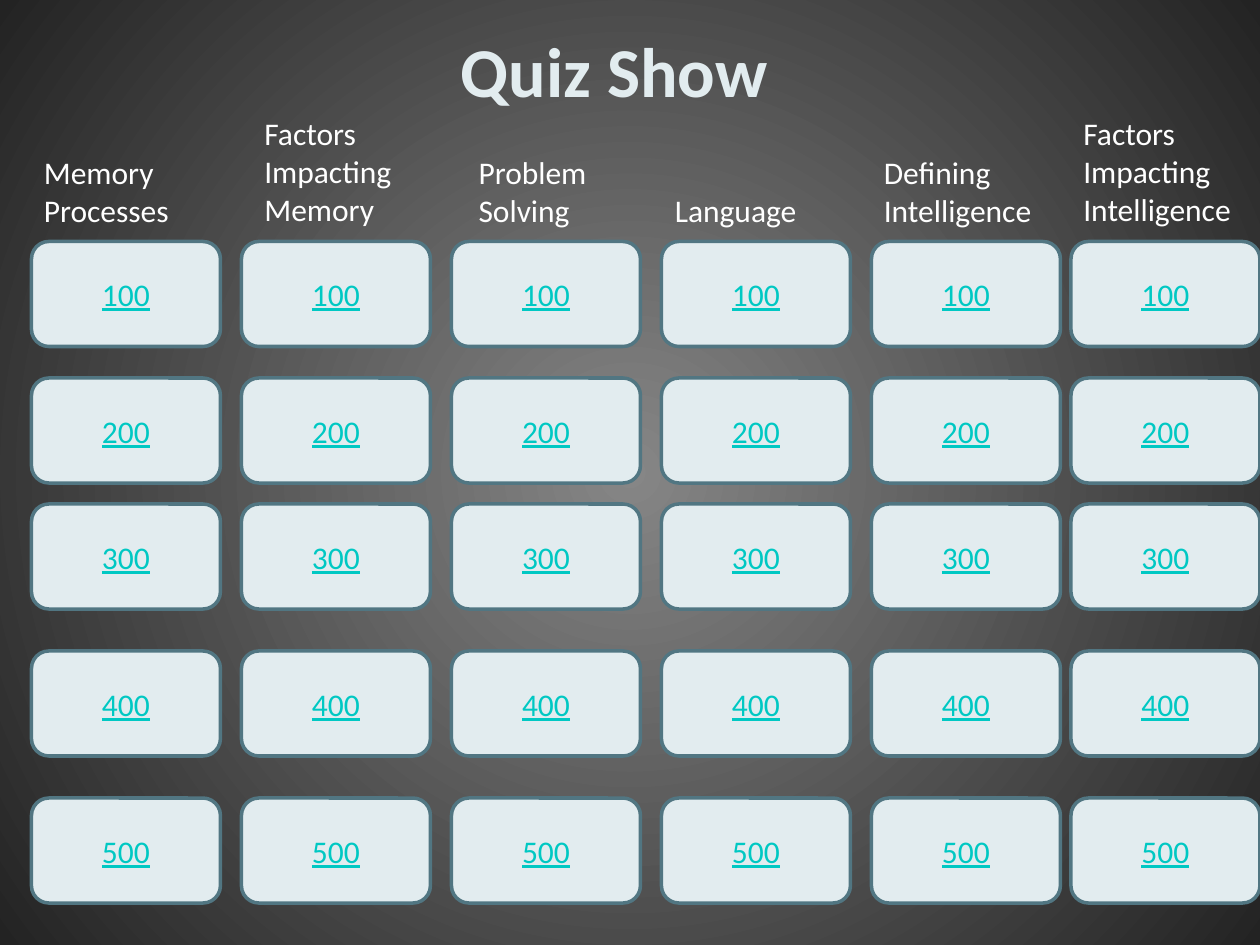
from dataclasses import dataclass
from lxml.etree import SubElement
from pptx import Presentation
from pptx.dml.color import RGBColor
from pptx.enum.shapes import MSO_SHAPE
from pptx.enum.text import MSO_ANCHOR, MSO_AUTO_SIZE, PP_ALIGN
from pptx.oxml.ns import qn
from pptx.util import Inches, Pt

TITLE = "Quiz Show"
# heading, card column, heading indent, heading width (grid columns)
TOPICS = [
    ("Memory Processes", 3, 0, 18),
    ("Factors Impacting Memory", 23, 1, 17),
    ("Problem Solving", 43, 1.4, 17),
    ("Language", 63, 0.1, 18),
    ("Defining Intelligence", 83, 0, 17),
    ("Factors Impacting Intelligence", 102, 0, 18),
]
# points, grid row
LEVELS = [("100", 23), ("200", 36), ("300", 48), ("400", 62), ("500", 76)]

WIDE, HIGH = Inches(10), Inches(7.5)
COLS, ROWS = 120, 90
CARD = (18, 10)
HEAD_END = 22.5  # grid row where every heading ends
LINE, PAD = 3.66, 1.2  # grid rows per heading line, and inset above plus below


@dataclass(frozen=True)
class Theme:
    font: str = "Calibri"
    glow: str = "868686"
    dark: str = "232323"
    card: str = "E2ECEF"
    edge: str = "517682"
    link: str = "00C8C3"
    head: str = "FFFFFF"
    rim: str = "A29D99"
    big: float = 40
    body: float = 18
    edge_pt: float = 2
    rim_pt: float = 1.42


THEME = Theme()
rgb = RGBColor.from_string


def grid(col, row, cols, rows):
    """Turn grid units into left, top, width and height."""
    x, y = WIDE / COLS, HIGH / ROWS
    return [round(v) for v in (col * x, row * y, cols * x, rows * y)]


def write(shape, text, color, frame, align=PP_ALIGN.LEFT, **font):
    box = shape.text_frame
    for name, value in {"word_wrap": True, **frame}.items():
        setattr(box, name, value)
    para = box.paragraphs[0]
    para.alignment = align
    run = para.add_run()
    run.text = text
    style = {"name": THEME.font, "size": Pt(THEME.body), **font}
    for name, value in style.items():
        setattr(run.font, name, value)
    run.font.color.rgb = rgb(color)
    return run


def paint(slide):
    """Fill the background with a round gradient from the centre."""
    fill = slide.background.fill
    fill.gradient()
    for stop, color in zip(fill.gradient_stops, (THEME.glow, THEME.dark)):
        stop.color.rgb = rgb(color)
    grad = slide.element.find(".//" + qn("a:gradFill"))
    line = grad.find(qn("a:lin"))
    ring = SubElement(grad, qn("a:path"), path="circle")
    SubElement(ring, qn("a:fillToRect"), dict.fromkeys("ltrb", "50000"))
    grad.replace(line, ring)


def outline(run, color, width):
    props = run.font._element
    line = SubElement(props, qn("a:ln"), w=str(Pt(width)))
    solid = SubElement(line, qn("a:solidFill"))
    SubElement(solid, qn("a:srgbClr"), val=color)
    props.insert(0, line)


def add_card(slide, col, row, points):
    card = slide.shapes.add_shape(
        MSO_SHAPE.ROUNDED_RECTANGLE, *grid(col, row, *CARD))
    card.shadow.inherit = False
    card.fill.solid()
    card.fill.fore_color.rgb = rgb(THEME.card)
    card.line.color.rgb = rgb(THEME.edge)
    card.line.width = Pt(THEME.edge_pt)
    write(card, points, THEME.link, {"vertical_anchor": MSO_ANCHOR.MIDDLE},
          PP_ALIGN.CENTER, underline=True)


def main():
    deck = Presentation()
    deck.slide_width, deck.slide_height = WIDE, HIGH
    slide = deck.slides.add_slide(deck.slide_layouts[5])
    paint(slide)
    grow = {"vertical_anchor": MSO_ANCHOR.TOP,
            "auto_size": MSO_AUTO_SIZE.SHAPE_TO_FIT_TEXT}

    for points, row in LEVELS:
        for _, col, _, _ in TOPICS:
            add_card(slide, col, row, points)

    title = slide.shapes.title
    sides = ("left", "top", "width", "height")
    for side, value in zip(sides, grid(29, 2, 59, 9.3)):
        setattr(title, side, value)
    run = write(title, TITLE, THEME.card, grow, PP_ALIGN.CENTER,
                size=Pt(THEME.big), bold=True)
    outline(run, THEME.rim, THEME.rim_pt)

    for text, col, indent, width in TOPICS:
        high = len(text.split()) * LINE + PAD  # one word to a line
        box = slide.shapes.add_textbox(
            *grid(col + indent, HEAD_END - high, width, high))
        write(box, text, THEME.head, grow)

    deck.save("out.pptx")


if __name__ == "__main__":
    main()
